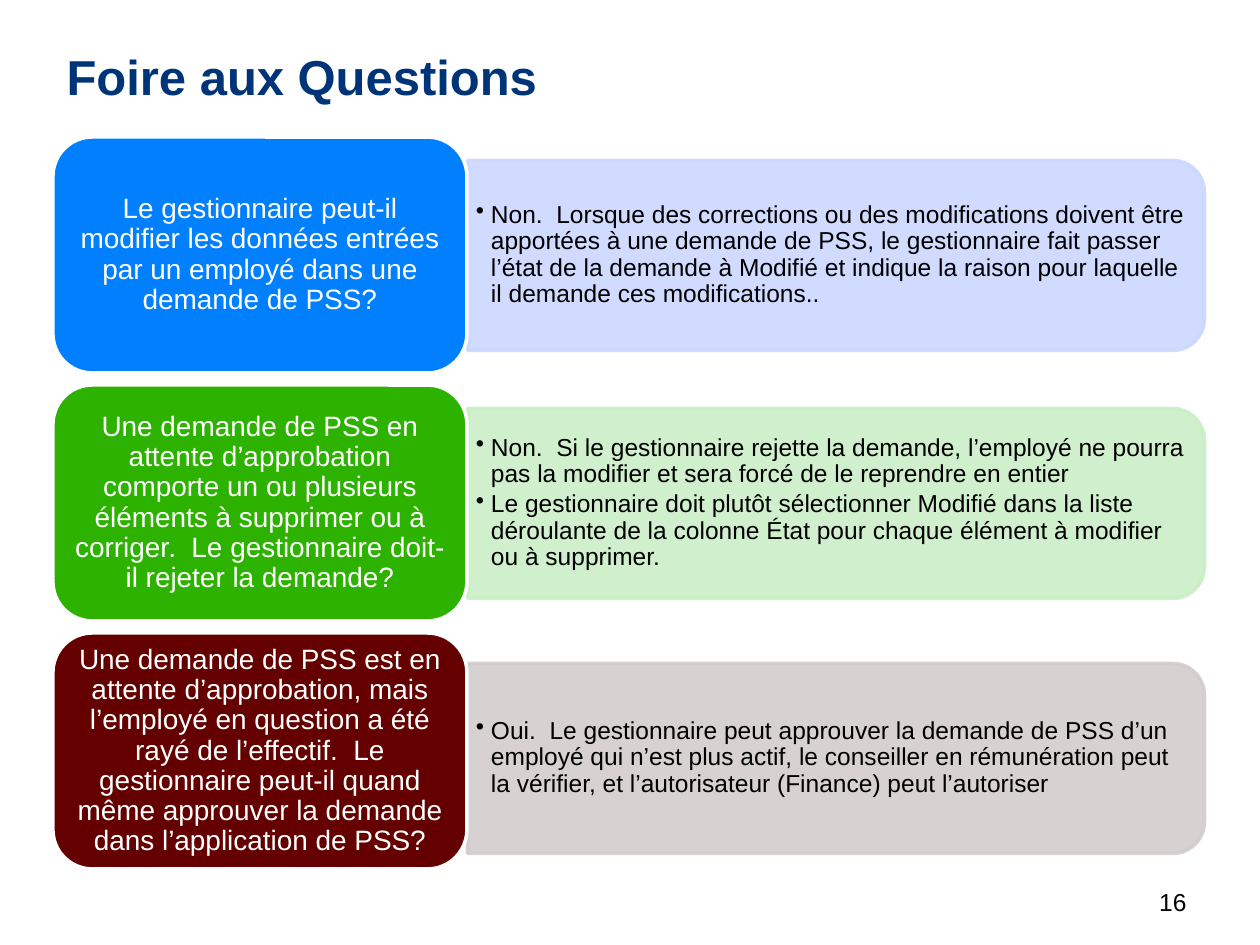
from lxml import etree
from pptx import Presentation
from pptx.dml.color import RGBColor
from pptx.enum.shapes import MSO_SHAPE
from pptx.enum.text import MSO_ANCHOR, PP_ALIGN
from pptx.oxml.ns import qn
from pptx.util import Emu, Pt

PX = 914400 // 126
MIDDLE, TOP = MSO_ANCHOR.MIDDLE, MSO_ANCHOR.TOP
LEFT, CENTER, RIGHT = PP_ALIGN.LEFT, PP_ALIGN.CENTER, PP_ALIGN.RIGHT
ROUNDED, HALF_ROUNDED = MSO_SHAPE.ROUNDED_RECTANGLE, MSO_SHAPE.ROUND_2_SAME_RECTANGLE

COLORS = {
    "title": "003478", "black": "000000", "white": "FFFFFF",
    "blue": "0080FF", "pale blue": "CCD8FF",
    "green": "2DB200", "pale green": "CBEEC7",
    "brown": "640000", "pale brown": "D3CCCC",
}

TITLE = "Foire aux Questions"
PAGE_NUMBER = "16"
# question, answers, colour, top of the answer panel
FAQ = [
    ("Le gestionnaire peut-il modifier les données entrées par un employé dans une "
     "demande de PSS?",
     ["Non.  Lorsque des corrections ou des modifications doivent être apportées à une "
      "demande de PSS, le gestionnaire fait passer l’état de la demande à Modifié et "
      "indique la raison pour laquelle il demande ces modifications.."],
     "blue", 160),
    ("Une demande de PSS en attente d’approbation comporte un ou plusieurs éléments à "
     "supprimer ou à corriger.  Le gestionnaire doit-il rejeter la demande?",
     ["Non.  Si le gestionnaire rejette la demande, l’employé ne pourra pas la modifier "
      "et sera forcé de le reprendre en entier",
      "Le gestionnaire doit plutôt sélectionner Modifié dans la liste déroulante de la "
      "colonne État pour chaque élément à modifier ou à supprimer."],
     "green", 408),
    ("Une demande de PSS est en attente d’approbation, mais l’employé en question a été "
     "rayé de l’effectif.  Le gestionnaire peut-il quand même approuver la demande dans "
     "l’application de PSS?",
     ["Oui.  Le gestionnaire peut approuver la demande de PSS d’un employé qui n’est plus "
      "actif, le conseiller en rémunération peut la vérifier, et l’autorisateur (Finance) "
      "peut l’autoriser"],
     "brown", 663),
]

QUESTION_LEFT, QUESTION_TOP, QUESTION_PITCH = 53, 137, 248
QUESTION_WIDTH, QUESTION_HEIGHT = 414, 236
ANSWER_LEFT, ANSWER_WIDTH, ANSWER_HEIGHT = 468, 737, 190
ANSWER_TEXT_WIDTH, ANSWER_TEXT_INSET = 727, 10
BULLET_INDENT = 15

FRAMES = {
    "title": {"vertical_anchor": MIDDLE},
    "number": {"vertical_anchor": TOP},
    "question": {"vertical_anchor": MIDDLE, "margin_left": 9 * PX, "margin_right": 9 * PX,
                 "margin_top": 4 * PX, "margin_bottom": 4 * PX},
    "answer": {"vertical_anchor": MIDDLE, "margin_left": 8 * PX, "margin_right": 8 * PX,
               "margin_top": 4 * PX, "margin_bottom": 4 * PX},
}
PARAGRAPHS = {
    "title": {"alignment": LEFT},
    "number": {"alignment": RIGHT},
    "question": {"alignment": CENTER, "line_spacing": 0.9},
    "answer": {"alignment": LEFT, "line_spacing": 0.9, "space_after": Pt(2)},
}
FONTS = {
    "title": ({"size": Pt(28), "bold": True}, "title"),
    "number": ({"size": Pt(14)}, "black"),
    "question": ({"size": Pt(16)}, "white"),
    "answer": ({"size": Pt(14)}, "black"),
}


def box(left, top, width, height):
    return [Emu(length * PX) for length in (left, top, width, height)]


def rgb(name):
    return RGBColor.from_string(COLORS[name])


def set_values(target, values):
    for name, value in values.items():
        setattr(target, name, value)


def add_bullet(paragraph):
    properties = paragraph._p.get_or_add_pPr()
    properties.set("marL", str(BULLET_INDENT * PX))
    properties.set("indent", str(-BULLET_INDENT * PX))
    etree.SubElement(properties, qn("a:buChar")).set("char", "•")


def write(shape, texts, role):
    frame = shape.text_frame
    set_values(frame, {"word_wrap": True, **FRAMES[role]})
    font_values, color = FONTS[role]
    for index, text in enumerate(texts):
        paragraph = frame.add_paragraph() if index else frame.paragraphs[0]
        paragraph.text = text
        if role == "answer":
            add_bullet(paragraph)
        set_values(paragraph, PARAGRAPHS[role])
        set_values(paragraph.font, {"name": "Arial", **font_values})
        paragraph.font.color.rgb = rgb(color)


def add_panel(slide, kind, place, fill, line):
    shape = slide.shapes.add_shape(kind, *place)
    shape.shadow.inherit = False
    shape.fill.solid()
    shape.fill.fore_color.rgb = rgb(fill)
    shape.line.color.rgb = rgb(line)
    shape.line.width = Pt(2)
    return shape


def add_answer(slide, answers, color, top):
    # The panel is drawn upright, then turned so its round corners face right.
    shift = (ANSWER_WIDTH - ANSWER_HEIGHT) // 2
    place = box(ANSWER_LEFT + shift, top - shift, ANSWER_HEIGHT, ANSWER_WIDTH)
    panel = add_panel(slide, HALF_ROUNDED, place, color, color)
    panel.rotation = 90
    for fill_color in panel._element.spPr.iter(qn("a:srgbClr")):
        etree.SubElement(fill_color, qn("a:alpha")).set("val", "90000")
    text_box = slide.shapes.add_textbox(*box(
        ANSWER_LEFT, top + ANSWER_TEXT_INSET,
        ANSWER_TEXT_WIDTH, ANSWER_HEIGHT - 2 * ANSWER_TEXT_INSET))
    write(text_box, answers, "answer")


def main():
    presentation = Presentation()
    presentation.slide_width, presentation.slide_height = Emu(1260 * PX), Emu(945 * PX)
    slide = presentation.slides.add_slide(presentation.slide_layouts[5])

    title = slide.shapes.title
    title.left, title.top, title.width, title.height = box(54, 38, 1150, 76)
    write(title, [TITLE], "title")

    for row, (question, answers, color, answer_top) in enumerate(FAQ):
        add_answer(slide, answers, f"pale {color}", answer_top)
        place = box(QUESTION_LEFT, QUESTION_TOP + row * QUESTION_PITCH,
                    QUESTION_WIDTH, QUESTION_HEIGHT)
        write(add_panel(slide, ROUNDED, place, color, "white"), [question], "question")

    number = slide.shapes.add_textbox(*box(937, 881, 262, 37))
    write(number, [PAGE_NUMBER], "number")
    presentation.save("out.pptx")


if __name__ == "__main__":
    main()
